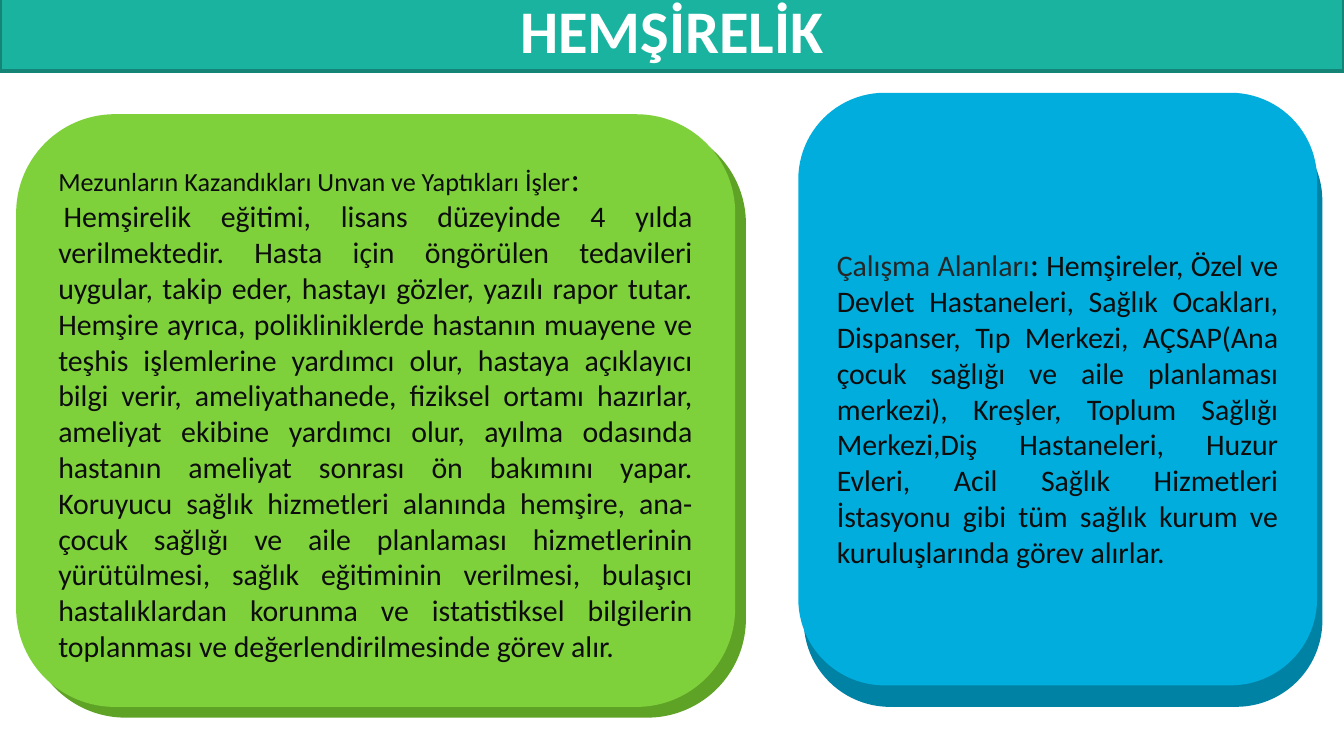
"""Build the nursing profession slide with a title band and two raised cards."""
import pptx
import pptx.dml.color
import pptx.enum.shapes
import pptx.enum.text
import pptx.util

Inches = pptx.util.Inches
Shapes = pptx.enum.shapes.MSO_SHAPE
Align = pptx.enum.text.PP_ALIGN

THEME = {
    "font": "Calibri",
    "band": "1AB39F", "band_edge": "138476", "white": "FFFFFF",
    "green": "7FD13B", "dark_green": "5FA326",
    "blue": "00ADDC", "dark_blue": "0082A5",
    "ink": "0D0D0D", "soft_ink": "262626",
    "title": 32.4, "colon": 18, "body": 16, "label": 14,
}

TITLE = "HEMŞİRELİK"
DUTIES = [
    (0, [("Mezunların Kazandıkları Unvan ve Yaptıkları İşler", "label", "ink"),
         (":", "colon", "ink")]),
    (0.04, [
        ("Hemşirelik eğitimi, lisans düzeyinde 4 yılda verilmektedir. "
         "Hasta için öngörülen tedavileri uygular, takip eder, hastayı gözler, "
         "yazılı rapor tutar. Hemşire ayrıca, polikliniklerde hastanın muayene "
         "ve teşhis işlemlerine yardımcı olur, hastaya açıklayıcı bilgi verir, "
         "ameliyathanede, fiziksel ortamı hazırlar, ameliyat ekibine yardımcı "
         "olur, ayılma odasında hastanın ameliyat sonrası ön bakımını yapar. "
         "Koruyucu sağlık hizmetleri alanında hemşire, ana-çocuk sağlığı ve aile "
         "planlaması hizmetlerinin yürütülmesi, sağlık eğitiminin verilmesi, "
         "bulaşıcı hastalıklardan korunma ve istatistiksel bilgilerin toplanması "
         "ve değerlendirilmesinde görev alır.", "body", "ink")]),
]
WORKPLACES = [
    (0, [("Çalışma Alanları", "body", "soft_ink"),
         (":", "colon", "ink"),
         (" Hemşireler, Özel ve Devlet Hastaneleri, Sağlık Ocakları, Dispanser, "
          "Tıp Merkezi, AÇSAP(Ana çocuk sağlığı ve aile planlaması merkezi), "
          "Kreşler, Toplum Sağlığı Merkezi,Diş Hastaneleri, Huzur Evleri, Acil "
          "Sağlık Hizmetleri İstasyonu gibi tüm sağlık kurum ve kuruluşlarında "
          "görev alırlar.", "body", "ink")]),
]
CARD_HEIGHT = 4.41
CARDS = [
    {"left": 0.12, "top": 0.85, "width": 5.35, "depth": (0.08, 0.08),
     "face": "green", "side": "dark_green", "top_inset": 0.05, "text": DUTIES},
    {"left": 5.94, "top": 0.69, "width": 3.86, "depth": (0.04, 0.16),
     "face": "blue", "side": "dark_blue", "top_inset": 0.3, "text": WORKPLACES},
]


def color(key):
    """Return the theme colour for a key."""
    return pptx.dml.color.RGBColor.from_string(THEME[key])


def add_panel(slide, preset, left, top, width, height, fill):
    """Add a flat filled shape without outline or shadow."""
    panel = slide.shapes.add_shape(
        preset, Inches(left), Inches(top), Inches(width), Inches(height))
    panel.shadow.inherit = False
    panel.fill.solid()
    panel.fill.fore_color.rgb = color(fill)
    panel.line.fill.background()
    return panel


def add_title(slide):
    """Add the title band across the top."""
    band = add_panel(slide, Shapes.RECTANGLE, 0, -0.1, 10, 0.63, "band")
    band.line.color.rgb = color("band_edge")
    band.line.width = pptx.util.Pt(2)
    frame = band.text_frame
    frame.margin_top = frame.margin_bottom = Inches(0.04)
    frame.vertical_anchor = pptx.enum.text.MSO_ANCHOR.MIDDLE
    heading = frame.paragraphs[0]
    heading.text = TITLE
    heading.alignment = Align.CENTER
    heading.font.name = THEME["font"]
    heading.font.size = pptx.util.Pt(THEME["title"])
    heading.font.bold = True
    heading.font.color.rgb = color("white")


def add_card(slide, card):
    """Add a rounded card with its darker side behind it."""
    left, top, width = card["left"], card["top"], card["width"]
    across, down = card["depth"]
    add_panel(slide, Shapes.ROUNDED_RECTANGLE, left + across, top + down,
              width, CARD_HEIGHT, card["side"])
    face = add_panel(slide, Shapes.ROUNDED_RECTANGLE, left, top,
                     width, CARD_HEIGHT, card["face"])
    frame = face.text_frame
    frame.word_wrap = True
    frame.margin_top = Inches(card["top_inset"])
    frame.vertical_anchor = pptx.enum.text.MSO_ANCHOR.MIDDLE
    for index, (indent, pieces) in enumerate(card["text"]):
        paragraph = frame.add_paragraph() if index else frame.paragraphs[0]
        paragraph.alignment = Align.JUSTIFY
        paragraph.font.name = THEME["font"]
        paragraph._p.get_or_add_pPr().set("indent", str(Inches(indent)))
        for words, size, ink in pieces:
            run = paragraph.add_run()
            run.text = words
            run.font.size = pptx.util.Pt(THEME[size])
            run.font.color.rgb = color(ink)


def main():
    """Build and save the slide."""
    deck = pptx.Presentation()
    deck.slide_width = Inches(10)
    deck.slide_height = deck.slide_width * 9 // 16
    slide = deck.slides.add_slide(deck.slide_layouts[6])
    add_title(slide)
    for card in CARDS:
        add_card(slide, card)
    deck.save("out.pptx")


if __name__ == "__main__":
    main()
